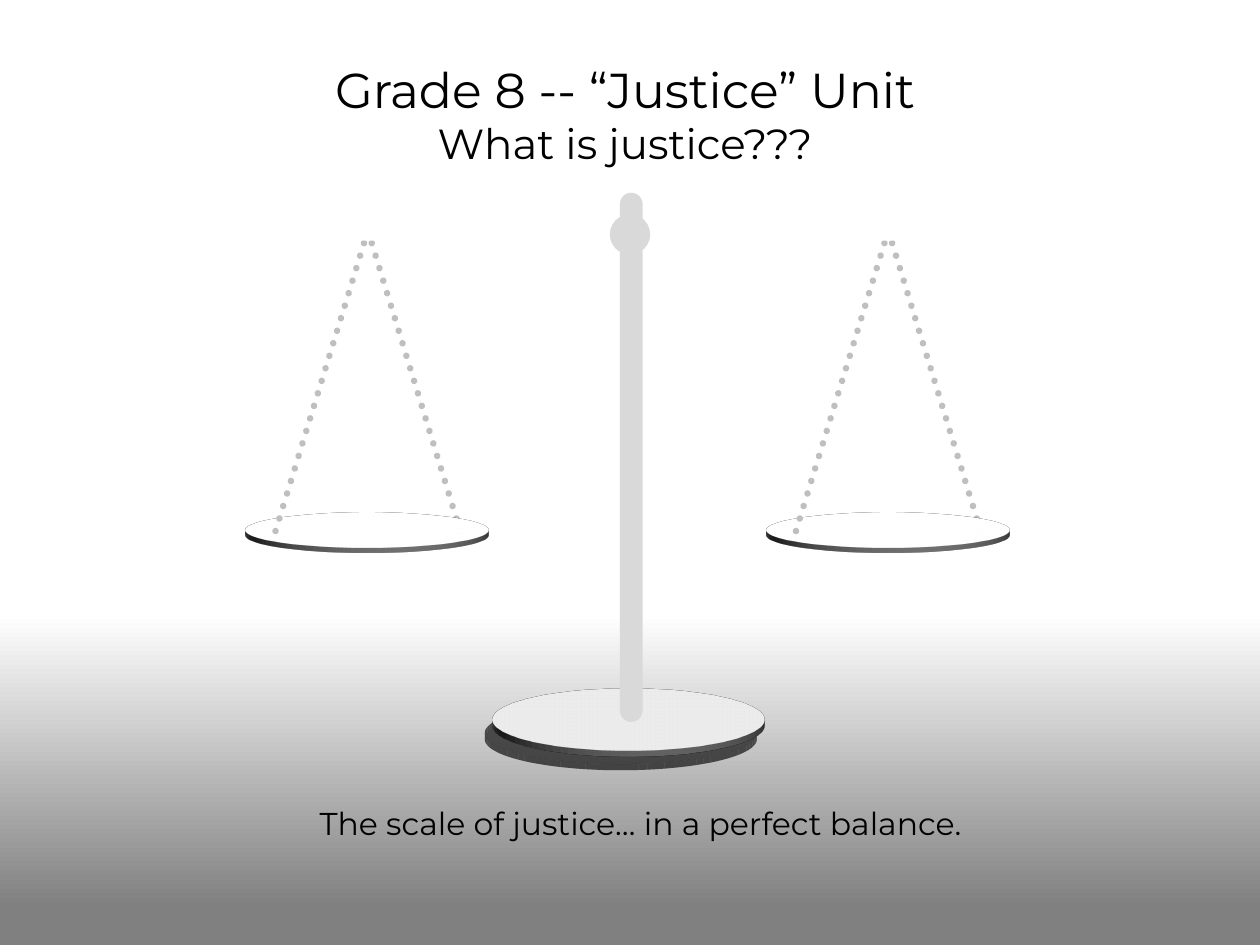
from dataclasses import dataclass

from lxml.etree import SubElement
from pptx import Presentation
from pptx.dml.color import RGBColor
from pptx.enum.dml import MSO_LINE
from pptx.enum.shapes import MSO_CONNECTOR, MSO_SHAPE
from pptx.enum.text import MSO_AUTO_SIZE, PP_ALIGN
from pptx.oxml.ns import qn
from pptx.util import Inches, Pt


@dataclass(frozen=True)
class Theme:
    font: str = "Montserrat"
    title_size: int = 28
    subtitle_size: int = 24
    caption_size: int = 18
    text: str = "000000"
    white: str = "FFFFFF"
    ground: str = "808080"
    metal: str = "D9D9D9"
    base: str = "BFBFBF"
    string: str = "BFBFBF"
    shadow: str = "000000"
    string_width: float = 3.75


THEME = Theme()
DEGREE = 60000
PAN_CENTERS = (2.92, 7.05)


def rgb(value):
    return RGBColor.from_string(value)


def add_solid(shapes, kind, left, top, width, height, color):
    shape = shapes.add_shape(
        kind, Inches(left), Inches(top), Inches(width), Inches(height))
    shape.shadow.inherit = False
    shape.fill.solid()
    shape.fill.fore_color.rgb = rgb(color)
    shape.line.fill.background()
    return shape


def add_rod(shapes, left, top, width, height, color):
    """Add a bar with fully rounded ends."""
    rod = add_solid(shapes, MSO_SHAPE.ROUNDED_RECTANGLE,
                    left, top, width, height, color)
    rod.adjustments[0] = 0.5
    return rod


def add_disc(shapes, left, top, size, color, *, latitude, depth):
    """Add a circle tilted back in space, with a thin extruded rim."""
    disc = add_solid(shapes, MSO_SHAPE.OVAL, left, top, size, size, color)
    properties = disc.element.spPr
    scene = SubElement(properties, qn("a:scene3d"))
    camera = SubElement(scene, qn("a:camera"), prst="orthographicFront")
    SubElement(camera, qn("a:rot"), lat=str(round(latitude * DEGREE)),
               lon="0", rev="0")
    SubElement(scene, qn("a:lightRig"), rig="threePt", dir="t")
    SubElement(properties, qn("a:sp3d"), extrusionH=str(Inches(depth)))
    return disc


def add_shadow(shape, *, blur, distance, direction, opacity):
    effects = shape.element.spPr.find(qn("a:effectLst"))
    shadow = SubElement(
        effects, qn("a:outerShdw"), blurRad=str(Pt(blur)),
        dist=str(Pt(distance)), dir=str(direction * DEGREE))
    color = SubElement(shadow, qn("a:srgbClr"), val=THEME.shadow)
    SubElement(color, qn("a:alpha"), val=str(opacity * 1000))


def add_string(shapes, center, reach):
    """Add a dotted string from above the pan center to one side of the pan."""
    string = shapes.add_connector(
        MSO_CONNECTOR.STRAIGHT, Inches(center), Inches(1.83),
        Inches(center + reach), Inches(4.27))
    string.line.color.rgb = rgb(THEME.string)
    string.line.width = Pt(THEME.string_width)
    string.line.dash_style = MSO_LINE.ROUND_DOT
    properties = string.element.spPr
    properties.find(qn("a:ln")).set("cap", "rnd")
    SubElement(properties, qn("a:effectLst"))


def add_hanging_pan(page, center):
    shapes = page.shapes.add_group_shape().shapes
    add_string(shapes, center, 0.75)
    add_disc(shapes, center - 0.97, 3.24, 1.93, THEME.metal,
             latitude=278.2, depth=0.04)
    add_string(shapes, center, -0.75)


def add_stand(page):
    base = add_disc(page.shapes, 3.91, 4.63, 2.16, THEME.base,
                    latitude=283.2, depth=0.05)
    add_shadow(base, blur=15, distance=9, direction=120, opacity=40)
    add_rod(page.shapes, 4.92, 1.53, 0.18, 4.2, THEME.metal)


def add_beam(page):
    shapes = page.shapes.add_group_shape().shapes
    beam = add_rod(shapes, 4.93, -0.33, 0.13, 4.35, THEME.white)
    beam.rotation = 270
    add_rod(shapes, 4.84, 1.7, 0.32, 0.32, THEME.metal)


def add_text(page, left, top, width, height, lines):
    box = page.shapes.add_textbox(
        Inches(left), Inches(top), Inches(width), Inches(height))
    frame = box.text_frame
    frame.word_wrap = True
    frame.auto_size = MSO_AUTO_SIZE.SHAPE_TO_FIT_TEXT
    for index, (text, size) in enumerate(lines):
        para = frame.add_paragraph() if index else frame.paragraphs[0]
        add_line_of_text(para, text, size=size)


def add_line_of_text(para, text, *, size, color=THEME.text):
    para.alignment = PP_ALIGN.CENTER
    span = para.add_run()
    span.text = text
    span.font.name = THEME.font
    span.font.size = Pt(size)
    span.font.color.rgb = rgb(color)


def set_background(page):
    fill = page.background.fill
    fill.gradient()
    fill.gradient_angle = 270
    stops = [(0.65, THEME.white), (0.96, THEME.ground)]
    for stop, (position, color) in zip(fill.gradient_stops, stops):
        stop.position = position
        stop.color.rgb = rgb(color)


def main():
    deck = Presentation()
    deck.slide_width, deck.slide_height = Inches(10), Inches(7.5)
    page = deck.slides.add_slide(deck.slide_layouts[6])
    set_background(page)

    for center in PAN_CENTERS:
        add_hanging_pan(page, center)
    add_stand(page)
    add_beam(page)

    add_text(page, 1, 0.42, 7.92, 0.98, [
        ("Grade 8 -- “Justice” Unit", THEME.title_size),
        ("What is justice???", THEME.subtitle_size),
    ])
    add_text(page, 1.75, 6.33, 6.67, 0.4, [
        ("The scale of justice… in a perfect balance.", THEME.caption_size),
    ])
    deck.save("out.pptx")


if __name__ == "__main__":
    main()
